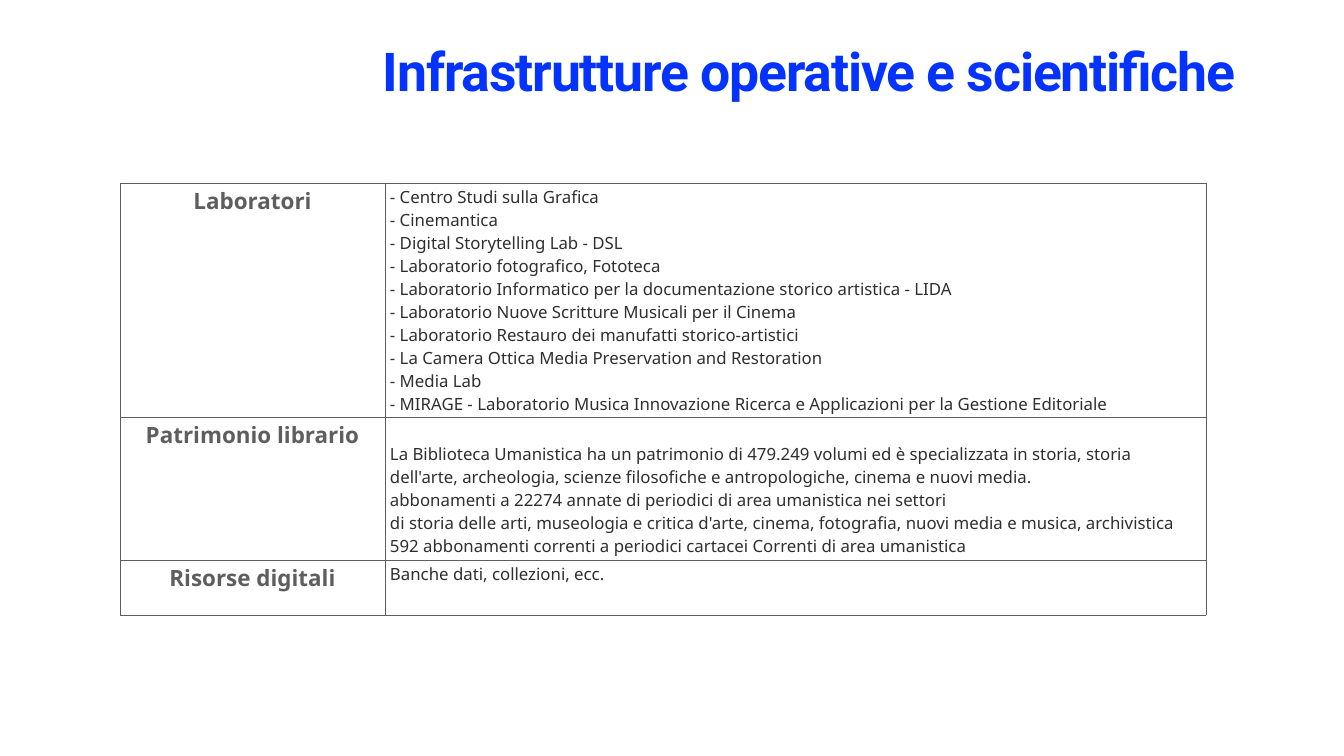
from lxml import etree
from pptx import Presentation
from pptx.dml.color import RGBColor
from pptx.enum.text import MSO_ANCHOR, PP_ALIGN
from pptx.oxml.ns import qn
from pptx.util import Pt

LEFT, CENTER, TOP = PP_ALIGN.LEFT, PP_ALIGN.CENTER, MSO_ANCHOR.TOP
PX = 18143

TITLE = "Infrastrutture operative e scientifiche"
ROWS = [
    ("Laboratori", 234, 3, [
        "- Centro Studi sulla Grafica",
        "- Cinemantica",
        "- Digital Storytelling Lab - DSL",
        "- Laboratorio fotografico, Fototeca",
        "- Laboratorio Informatico per la documentazione storico artistica - LIDA",
        "- Laboratorio Nuove Scritture Musicali per il Cinema",
        "- Laboratorio Restauro dei manufatti storico-artistici",
        "- La Camera Ottica Media Preservation and Restoration",
        "- Media Lab",
        "- MIRAGE - Laboratorio Musica Innovazione Ricerca e Applicazioni per la Gestione Editoriale",
    ]),
    ("Patrimonio librario", 143, 26, [
        "La Biblioteca Umanistica ha un patrimonio di 479.249 volumi ed è specializzata in storia, storia",
        "dell'arte, archeologia, scienze filosofiche e antropologiche, cinema e nuovi media.",
        "abbonamenti a 22274 annate di periodici di area umanistica nei settori",
        "di storia delle arti, museologia e critica d'arte, cinema, fotografia, nuovi media e musica, archivistica",
        "592 abbonamenti correnti a periodici cartacei Correnti di area umanistica",
    ]),
    ("Risorse digitali", 55, 3, ["Banche dati, collezioni, ecc."]),
]
COLUMNS = [265, 821]
BORDER = "5E5E5E"
TITLE_FONT = {"name": "Roboto", "size": Pt(76.5), "bold": True}
HEAD_FONT = {"name": "Noto Sans", "size": Pt(32), "bold": True}
BODY_FONT = {"name": "Noto Sans", "size": Pt(24), "bold": False}


def px(*values):
    return [v * PX for v in values]


def rgb(value):
    return RGBColor.from_string(value)


def set_attrs(target, values):
    for name, value in values.items():
        setattr(target, name, value)


def write(tf, lines, font, color, align):
    tf.word_wrap = True
    for i, line in enumerate(lines):
        p = tf.paragraphs[0] if i == 0 else tf.add_paragraph()
        p.alignment = align
        r = p.add_run()
        r.text = line
        set_attrs(r.font, font)
        r.font.color.rgb = rgb(color)


def add_borders(cell):
    tc_pr = cell._tc.get_or_add_tcPr()
    for side in ("lnL", "lnR", "lnT", "lnB"):
        ln = etree.SubElement(tc_pr, qn(f"a:{side}"), w=str(Pt(1)))
        fill = etree.SubElement(ln, qn("a:solidFill"))
        etree.SubElement(fill, qn("a:srgbClr"), val=BORDER)


def fill_cell(cell, lines, font, color, align, top):
    margins = dict(zip(("margin_left", "margin_right", "margin_top", "margin_bottom"),
                       px(5, 5, top, 2)))
    set_attrs(cell, {**margins, "vertical_anchor": TOP})
    write(cell.text_frame, lines, font, color, align)
    add_borders(cell)
    cell.fill.background()


def add_title(s):
    tf = s.shapes.add_textbox(*px(380, 38, 940, 64)).text_frame
    set_attrs(tf, {f"margin_{side}": 3 * PX for side in ("left", "right", "top", "bottom")})
    write(tf, [TITLE], TITLE_FONT, "0433FF", LEFT)
    p = tf.paragraphs[0]
    p.line_spacing = Pt(88)
    p.runs[0].font._element.set("spc", "-170")


def add_resources(s):
    heights = [row[1] for row in ROWS]
    table = s.shapes.add_table(len(ROWS), len(COLUMNS),
                               *px(120, 183, sum(COLUMNS), sum(heights))).table
    set_attrs(table, {"first_row": False, "horz_banding": False})
    for column, width in zip(table.columns, COLUMNS):
        column.width = width * PX
    for i, (head, height, top, lines) in enumerate(ROWS):
        table.rows[i].height = height * PX
        fill_cell(table.cell(i, 0), [head], HEAD_FONT, "5E5E5E", CENTER, 3)
        fill_cell(table.cell(i, 1), lines, BODY_FONT, "2F2F2F", LEFT, top)


def main():
    prs = Presentation()
    prs.slide_width, prs.slide_height = px(1344, 756)
    s = prs.slides.add_slide(prs.slide_layouts[6])
    add_title(s)
    add_resources(s)
    prs.save("out.pptx")


if __name__ == "__main__":
    main()
